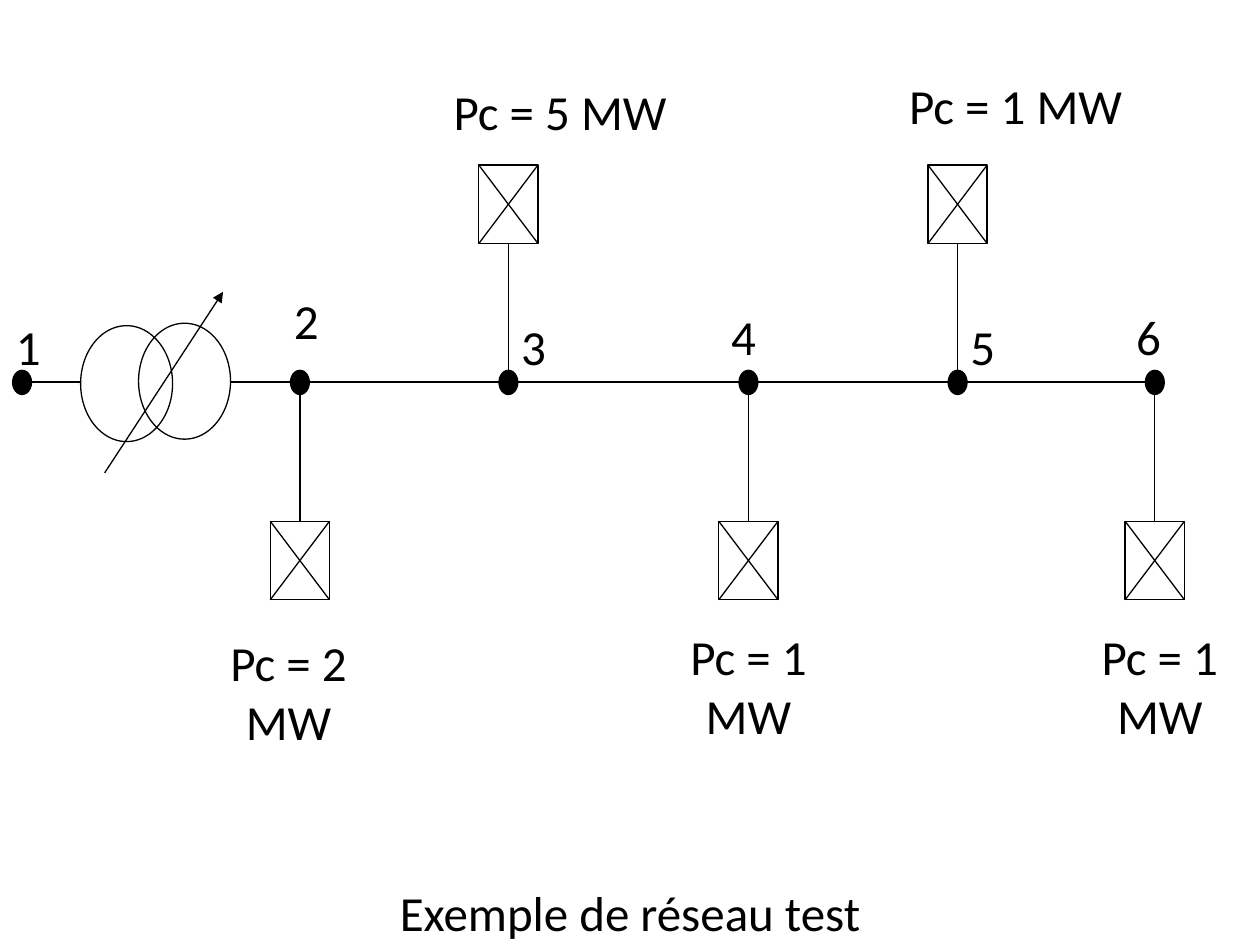
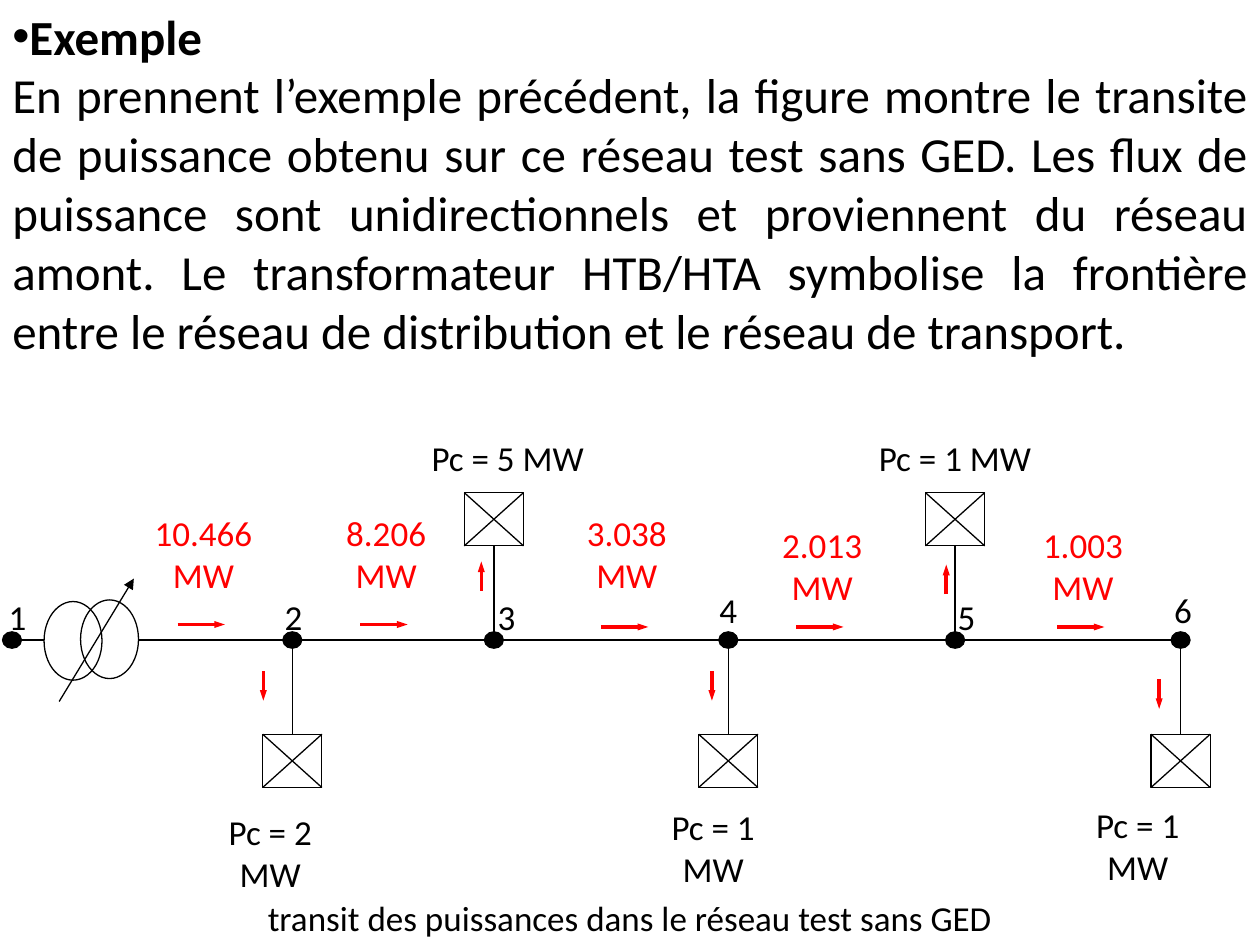
from dataclasses import dataclass

from lxml import etree
from pptx import Presentation
from pptx.dml.color import RGBColor
from pptx.enum import shapes, text
from pptx.oxml import ns
from pptx.util import Inches, Pt

SLIDE_W, SLIDE_H = 10, 7.5
BLACK, WHITE, RED = "000000", "FFFFFF", "FF0000"
FONT = "Calibri"
THIN, BUS, FLOW = 0.75, 1, 2  # line widths in points

# Parts of the network: widths in hundredths of the box, heights in its rows
ROWS = 18
DOT_W, DOT_H = 1.5, 1
LOAD_W, LOAD_H = 4.7, 3.25
CIRCLE_H = 4.8
FLOW_W, FLOW_H = 3.75, 1.8


@dataclass
class Box:
    """Area with 100 columns and ROWS rows; row 0 is the middle."""
    left: float
    top: float
    width: float
    height: float

    @property
    def col(self):
        return self.width / 100

    @property
    def row(self):
        return self.height / ROWS

    def x(self, col):
        return self.left + col * self.col

    def y(self, row):
        return self.top + self.height / 2 + row * self.row


@dataclass
class Node:
    """Numbered node; shifts are columns from the node's centre."""
    name: str
    col: float
    name_shift: float
    name_row: float
    load: str = ""
    load_shift: float = 0
    load_row: float = 0

    @property
    def side(self):
        return -1 if self.load_row < 0 else 1


@dataclass
class Style:
    size: int
    name_w: float
    below_w: float
    above_w: float
    transformer_col: float
    circle_w: float


def color(hex_value):
    return RGBColor.from_string(hex_value)


# Drawing helpers
def add_text(slide, x, y, w, h, *paragraphs, size=20, ink=BLACK, bold_first=False,
             bullet_first=False, align=text.PP_ALIGN.CENTER,
             anchor=text.MSO_ANCHOR.TOP, margins=(0, 0)):
    frame = slide.shapes.add_textbox(Inches(x), Inches(y), Inches(w), Inches(h)).text_frame
    frame.word_wrap = True
    frame.vertical_anchor = anchor
    frame.margin_left = frame.margin_right = Inches(margins[0])
    frame.margin_top = frame.margin_bottom = Inches(margins[1])
    for i, words in enumerate(paragraphs):
        paragraph = frame.add_paragraph() if i else frame.paragraphs[0]
        paragraph.alignment = align
        run = paragraph.add_run()
        run.text = words
        run.font.name, run.font.size = FONT, Pt(size)
        run.font.color.rgb = color(ink)
        run.font.bold = bold_first and i == 0
        if bullet_first and i == 0:
            props = paragraph._p.get_or_add_pPr()
            etree.SubElement(props, ns.qn("a:buFont"), typeface="Arial")
            etree.SubElement(props, ns.qn("a:buChar"), char="•")


def add_line(slide, start, end, width=THIN, ink=BLACK, head=None):
    line = slide.shapes.add_connector(shapes.MSO_CONNECTOR.STRAIGHT,
                                      *map(Inches, (*start, *end)))
    line.line.color.rgb = color(ink)
    line.line.width = Pt(width)
    if head:
        etree.SubElement(line.line._get_or_add_ln(), ns.qn("a:tailEnd"),
                         type="triangle", w=head, len="med")
    etree.SubElement(line._element.spPr, ns.qn("a:effectLst"))


def add_shape(slide, kind, cx, cy, w, h, fill=None):
    """Outlined shape around its centre."""
    shape = slide.shapes.add_shape(kind, *map(Inches, (cx - w / 2, cy - h / 2, w, h)))
    shape.shadow.inherit = False
    shape.line.color.rgb = color(BLACK)
    shape.line.width = Pt(THIN)
    if fill:
        shape.fill.solid()
        shape.fill.fore_color.rgb = color(fill)
    else:
        shape.fill.background()


# Regions
def transformer(slide, box, style):
    """Two overlapping circles crossed by an arrow; returns both ends."""
    left, w = box.x(style.transformer_col), style.circle_w * box.col
    right = left + 1.63 * w
    for cx, shift in ((right - w / 2, -0.05), (left + w / 2, 0.05)):
        add_shape(slide, shapes.MSO_SHAPE.OVAL, cx, box.y(shift), w, CIRCLE_H * box.row)
    span = right - left
    add_line(slide, (left + 0.16 * span, box.y(3.75)),
             (left + 0.95 * span, box.y(-3.75)), head="med")
    return left, right


def load_branch(slide, box, node, style):
    """Stem from the bus to a crossed box, with the load's label."""
    cx, side = box.x(node.col), node.side
    end = ROWS / 2 - LOAD_H
    w, h = LOAD_W * box.col, LOAD_H * box.row
    cy = box.y(side * (end + LOAD_H / 2))
    add_shape(slide, shapes.MSO_SHAPE.RECTANGLE, cx, cy, w, h, fill=WHITE)
    for slope in (1, -1):
        add_line(slide, (cx - w / 2, cy - slope * h / 2), (cx + w / 2, cy + slope * h / 2))
    add_line(slide, (cx, box.y(side * DOT_H / 2)), (cx, box.y(side * end)))
    label_w = (style.below_w if side > 0 else style.above_w) * box.col
    add_text(slide, box.x(node.col + node.load_shift) - label_w / 2,
             box.y(node.load_row), label_w, 2.25 * box.row, node.load, size=style.size)


def network(slide, box, nodes, style):
    left, right = transformer(slide, box, style)
    # Bus on both sides of the transformer
    add_line(slide, (box.x(nodes[0].col), box.y(0)), (left, box.y(0)), BUS)
    add_line(slide, (right, box.y(0)), (box.x(nodes[-1].col), box.y(0)), BUS)
    for node in nodes:
        if node.load:
            load_branch(slide, box, node, style)
        add_shape(slide, shapes.MSO_SHAPE.OVAL, box.x(node.col), box.y(0),
                  DOT_W * box.col, DOT_H * box.row, fill=BLACK)
        add_text(slide, box.x(node.col + node.name_shift - style.name_w / 2),
                 box.y(node.name_row), style.name_w * box.col, 2.25 * box.row,
                 node.name, size=style.size)


def power_flows(slide, box, bus_flows, load_flows):
    """Red arrows along the bus, with their power, and beside the loads."""
    for power, col, row, label_row in bus_flows:
        add_line(slide, (box.x(col), box.y(row)), (box.x(col + FLOW_W), box.y(row)),
                 FLOW, RED, head="sm")
        add_text(slide, box.x(col - 3.5), box.y(label_row), 11.1 * box.col,
                 2.25 * box.row, power, ink=RED)
    for col, row in load_flows:
        end = row + (FLOW_H if row > 0 else -FLOW_H)
        add_line(slide, (box.x(col), box.y(row)), (box.x(col), box.y(end)),
                 FLOW, RED, head="sm")


def caption(slide, words, size, height):
    add_text(slide, 0, SLIDE_H - height, SLIDE_W, height, words, size=size,
             anchor=text.MSO_ANCHOR.MIDDLE, margins=(0.1, 0.05))


# Slides
def test_network_slide(slide):
    box = Box(0, 1.31, SLIDE_W, 3.45)
    nodes = [
        Node("1", 1.75, 0.5, -2.75),
        Node("2", 23.8, 0.5, -3.8, "Pc = 2 MW", -0.9, 10.35),
        Node("3", 40.35, 2, -2.75, "Pc = 5 MW", 4.1, -12.45),
        Node("4", 59.4, -0.4, -3.15, "Pc = 1 MW", 0, 10.1),
        Node("5", 76, 2, -2.75, "Pc = 1 MW", 4.6, -12.7),
        Node("6", 91.65, -0.5, -3.15, "Pc = 1 MW", 0.4, 10.1),
    ]
    network(slide, box, nodes, Style(28, 2.5, 10.4, 18.7, 6.4, 7.3))
    caption(slide, "Exemple de réseau test", 28, 0.53)


def power_transit_slide(slide):
    add_text(slide, 0, 0, SLIDE_W, 3.4, "Exemple",
             "En prennent l’exemple précédent, la figure montre le transite de puissance "
             "obtenu sur ce réseau test sans GED. Les flux de puissance sont "
             "unidirectionnels et proviennent du réseau amont. Le transformateur HTB/HTA "
             "symbolise la frontière entre le réseau de distribution et le réseau de "
             "transport.",
             size=28, bold_first=True, bullet_first=True,
             align=text.PP_ALIGN.JUSTIFY, margins=(0.1, 0.05))
    box = Box(0, 3.91, SLIDE_W, 2.34)
    nodes = [
        Node("1", 0.95, 0.45, -2.75),
        Node("2", 23.2, 0.1, -2.75, "Pc = 2 MW", -1.75, 10.4),
        Node("3", 39.2, 1, -2.75, "Pc = 5 MW", 1.1, -12.45),
        Node("4", 57.8, 0, -3.15, "Pc = 1 MW", -1.2, 10.1),
        Node("5", 75.8, 0.9, -2.75, "Pc = 1 MW", 0, -12.45),
        Node("6", 93.7, 0.2, -3.15, "Pc = 1 MW", -3.4, 10),
    ]
    network(slide, box, nodes, Style(20, 2.4, 10.1, 14.7, 3.5, 4.6))
    power_flows(slide, box,
                bus_flows=[("10.466 MW", 14.1, -0.95, -7.85),
                           ("8.206 MW", 28.6, -0.95, -7.85),
                           ("3.038 MW", 47.7, -0.8, -7.85),
                           ("2.013 MW", 63.2, -0.8, -7.1),
                           ("1.003 MW", 83.9, -0.8, -7.1)],
                load_flows=[(20.9, 1.9), (38.2, -3), (56.5, 1.9), (75.1, -2.8), (92, 2.4)])
    caption(slide, "transit des puissances dans le réseau test sans GED", 20, 0.44)


def main():
    deck = Presentation()
    deck.slide_width, deck.slide_height = Inches(SLIDE_W), Inches(SLIDE_H)
    for build in (test_network_slide, power_transit_slide):
        build(deck.slides.add_slide(deck.slide_layouts[6]))
    deck.save("out.pptx")


if __name__ == "__main__":
    main()
